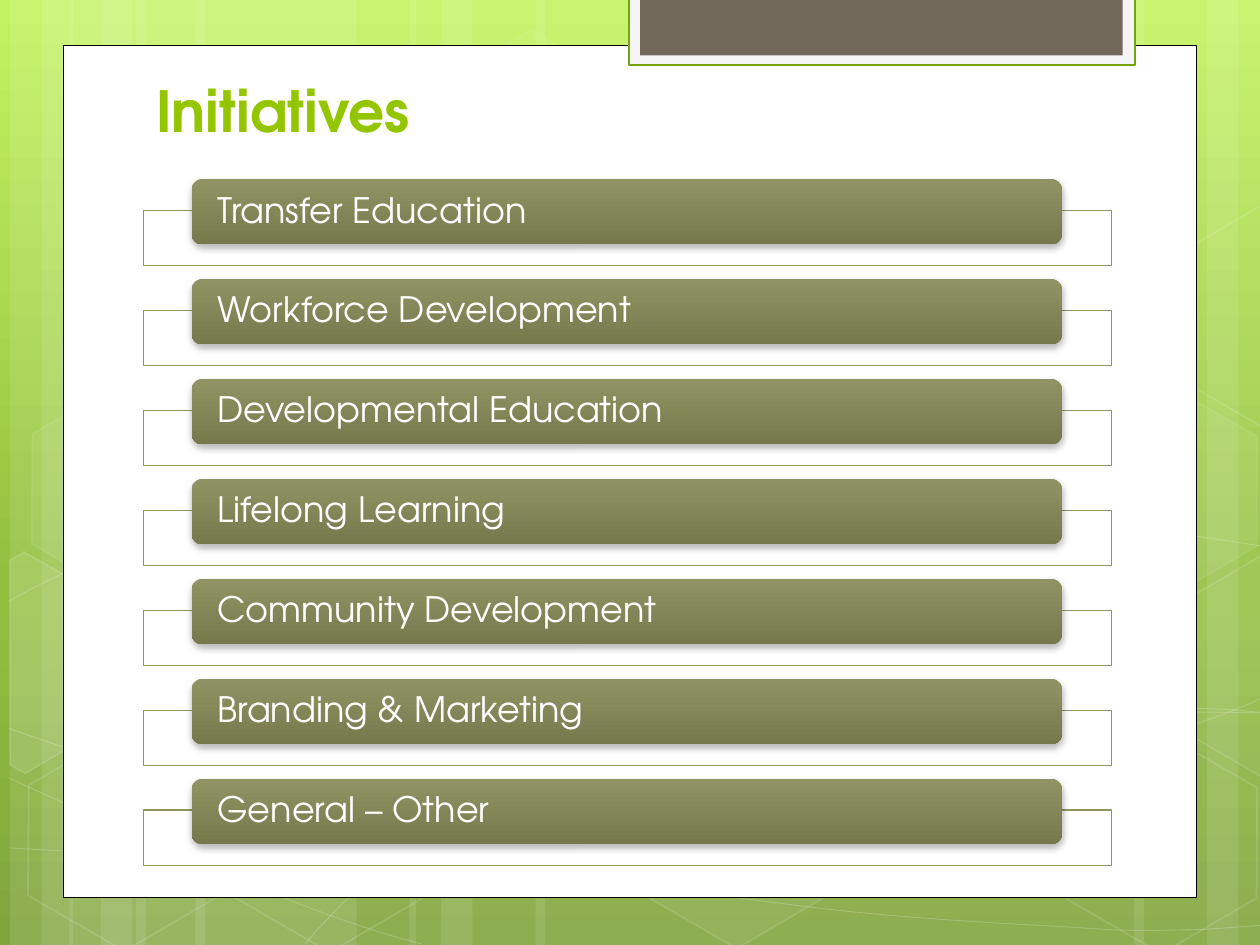
"""Build the Initiatives slide: seven framed bars on a green patterned ground."""
from lxml.etree import SubElement
from pptx import Presentation
from pptx.dml.color import RGBColor
from pptx.enum.shapes import MSO_SHAPE
from pptx.enum.text import MSO_ANCHOR, PP_ALIGN
from pptx.oxml.ns import qn
from pptx.util import Inches, Pt

FONT = "TeX Gyre Adventor"
WHITE, OLIVE = "FFFFFF", "909465"
TITLE = "Initiatives"
ITEMS = [
    "Transfer Education", "Workforce Development", "Developmental Education",
    "Lifelong Learning", "Community Development", "Branding & Marketing",
    "General – Other",
]
GROUND = [(0, "C3F35F"), (62, "93BF3F"), (100, "81A53E")]
BAR = [(0, OLIVE), (100, "75794C")]
STRIPES = [
    (1.08, 1.75), (0.08, 0.5), (0.33, 0.83), (1.55, 1.75), (0.55, 0.5), (0.8, 0.83),
    (7.33, 1.75), (9.58, 0.5), (9, 0.83), (4.25, 3.08), (3.25, 0.5), (3.5, 0.83),
]
CURVES = [
    [(0.07, 6.73), (0.61, 6.76), (1.15, 6.79), (1.9, 6.78), (2.65, 6.77), (3.58, 6.75),
     (4.58, 6.65), (5.58, 6.55), (7, 6.36), (7.92, 6.17), (8.83, 5.98), (9.77, 5.68),
     (10.07, 5.51)],
    [(0.07, 4.77), (0.36, 4.61), (0.65, 4.46), (1.21, 4.31), (1.78, 4.16), (2.59, 3.94),
     (3.47, 3.87), (4.36, 3.8), (5.44, 3.79), (6.54, 3.87), (7.64, 3.95), (9.47, 4.26),
     (10.07, 4.34)],
    [(0.06, 6.17), (1.27, 6.72), (2.47, 7.27), (3.34, 7.49)],
    [(0.07, 5.78), (0.38, 5.89), (0.7, 6), (1.28, 6.16), (1.86, 6.31), (2.73, 6.56),
     (3.57, 6.73), (4.4, 6.9), (5.45, 7.08), (6.28, 7.18), (7.11, 7.29), (8, 7.33),
     (8.53, 7.36), (9.05, 7.4), (9.19, 7.38), (9.45, 7.38), (9.71, 7.37), (9.89, 7.35),
     (10.07, 7.34)],
    [(2.42, 7.49), (2.6, 7.29), (2.78, 7.09), (3.02, 6.91), (3.26, 6.73), (3.6, 6.53),
     (3.88, 6.39), (4.16, 6.25), (4.33, 6.19), (4.7, 6.09), (5.06, 5.99), (5.73, 5.85),
     (6.08, 5.78), (6.44, 5.71), (6.49, 5.71), (6.8, 5.69), (7.11, 5.66), (7.6, 5.63),
     (7.94, 5.62), (8.29, 5.61), (8.86, 5.62), (8.86, 5.62), (9.08, 5.62), (9.31, 5.62),
     (9.53, 5.62), (9.71, 5.63), (9.88, 5.64), (9.97, 5.65), (10.06, 5.66), (10.03, 5.65),
     (10.06, 5.66)],
]
CURVES[4].remove((8.86, 5.62))
HEXES = [
    (3.34, 0.36, 4, 8), (4.97, 5.89, 6, 12), (0.11, 5.91, 0, 12), (0.14, 3.12, 7, 8),
    (1.74, 5.92, 0, 12), (7.53, 4.53, 10, 12), (8.34, 5.93, 0, 12), (8.34, 3.14, 7, 8),
]
CUTS = [
    ([(0.08, 4.45), (0.19, 4.38), (0.96, 4.82), (0.95, 5.7), (0.2, 6.14), (0.08, 6.07)], 10),
    ([(9.26, 4.85), (10.01, 4.41), (10.09, 4.46), (10.09, 6.13), (10.02, 6.17),
      (9.26, 5.73)], 4),
    ([(9.26, 2.07), (10.01, 1.63), (10.1, 1.68), (10.09, 3.35), (10.02, 3.39),
      (9.26, 2.95)], 0),
]
PANELS = [
    ((0.5, 0.36, 9, 6.76), WHITE, ("000000", 0.5)),
    ((4.99, -0.24, 4.02, 0.76), "F5F5F5", ("74A510", 1.25)),
    ((5.08, -0.24, 3.83, 0.68), "71685A", None),
]
TOP, LAST = 1.42, 6.18


def tint(node, color, alpha):
    tone = SubElement(node, qn("a:srgbClr"), val=color)
    SubElement(tone, qn("a:alpha"), val=str(alpha * 1000))


def paint(fill, color, alpha=100):
    if not color or not alpha:
        fill.background()
        return
    fill.solid()
    fill.fore_color.rgb = RGBColor.from_string(color)
    if alpha < 100:
        tone = fill._xPr.find(qn("a:solidFill")).find(qn("a:srgbClr"))
        SubElement(tone, qn("a:alpha"), val=str(alpha * 1000))


def grade(fill, stops):
    fill.gradient()
    fill.gradient_angle = 270
    steps = fill._xPr.find(qn("a:gradFill")).find(qn("a:gsLst"))
    steps.clear()
    for at, color in stops:
        tint(SubElement(steps, qn("a:gs"), pos=str(at * 1000)), color, 100)


def style(shape, color=None, alpha=100, line=None, fade=100):
    shape.shadow.inherit = False
    paint(shape.fill, color, alpha)
    paint(shape.line.fill, line and line[0], fade)
    if line:
        shape.line.width = Pt(line[1])
    return shape


def block(slide, kind, box, **look):
    return style(slide.shapes.add_shape(kind, *map(Inches, box)), **look)


def trace(slide, points, close, **look):
    spots = [(Inches(x), Inches(y)) for x, y in points]
    pen = slide.shapes.build_freeform(*spots[0])
    pen.add_line_segments(spots[1:], close=close)
    return style(pen.convert_to_shape(), **look)


def bend(shape):
    legs = list(shape.element.iter(qn("a:lnTo")))
    route = legs[0].getparent()
    for k in range(0, len(legs), 3):
        curve = SubElement(route, qn("a:cubicBezTo"))
        for leg in legs[k:k + 3]:
            curve.append(leg[0])
            route.remove(leg)


def write(shape, words, size, color, bold=False, anchor=MSO_ANCHOR.MIDDLE,
          pad=(0.1, 0.05), space=1.0):
    frame = shape.text_frame
    frame.word_wrap = True
    frame.vertical_anchor = anchor
    frame.margin_left = frame.margin_right = Inches(pad[0])
    frame.margin_top = frame.margin_bottom = Inches(pad[1])
    para = frame.paragraphs[0]
    para.alignment = PP_ALIGN.LEFT
    para.line_spacing = space
    run = para.add_run()
    run.text = words
    run.font.name, run.font.size, run.font.bold = FONT, Pt(size), bold
    run.font.color.rgb = RGBColor.from_string(color)


def shade(shape):
    effect = shape.element.spPr.find(qn("a:effectLst"))
    tint(SubElement(effect, qn("a:outerShdw"), blurRad=str(Pt(4)), dist=str(Pt(2)),
                    dir="5400000", rotWithShape="0"), "000000", 28)


def scene(slide):
    grade(slide.background.fill, GROUND)
    for left, width in STRIPES:
        block(slide, MSO_SHAPE.RECTANGLE, (left, 0, width, 7.5), color=WHITE, alpha=10)
    for knots in CURVES:
        bend(trace(slide, knots, False, line=(WHITE, 0.5), fade=20))
    for left, top, alpha, fade in HEXES:
        cell = block(slide, MSO_SHAPE.HEXAGON, (left, top, 1.75, 1.52), color=WHITE,
                     alpha=alpha, line=(WHITE, 1), fade=fade)
        cell.adjustments[0] = 0.285
        cell.rotation = 30
    for points, alpha in CUTS:
        trace(slide, points, True, color=WHITE, alpha=alpha, line=(WHITE, 1), fade=12)
    for box, color, line in PANELS:
        block(slide, MSO_SHAPE.RECTANGLE, box, color=color, line=line)


def main():
    deck = Presentation()
    deck.slide_width, deck.slide_height = Inches(10), Inches(7.5)
    slide = deck.slides.add_slide(deck.slide_layouts[6])
    scene(slide)
    head = slide.shapes.add_textbox(*map(Inches, (1.14, 0.51, 8.27, 0.68)))
    write(head, TITLE, 32.4, "94C600", bold=True, anchor=MSO_ANCHOR.BOTTOM)
    pitch = (LAST - TOP) / (len(ITEMS) - 1)
    for n, item in enumerate(ITEMS):
        top = TOP + n * pitch
        block(slide, MSO_SHAPE.RECTANGLE, (1.14, top + 0.25, 7.68, 0.44),
              color=WHITE, alpha=90, line=(OLIVE, 0.75))
        bar = block(slide, MSO_SHAPE.ROUNDED_RECTANGLE, (1.52, top, 6.91, 0.52))
        grade(bar.fill, BAR)
        shade(bar)
        write(bar, item, 20, WHITE, pad=(0.18, 0), space=0.9)
    deck.save("out.pptx")


if __name__ == "__main__":
    main()
